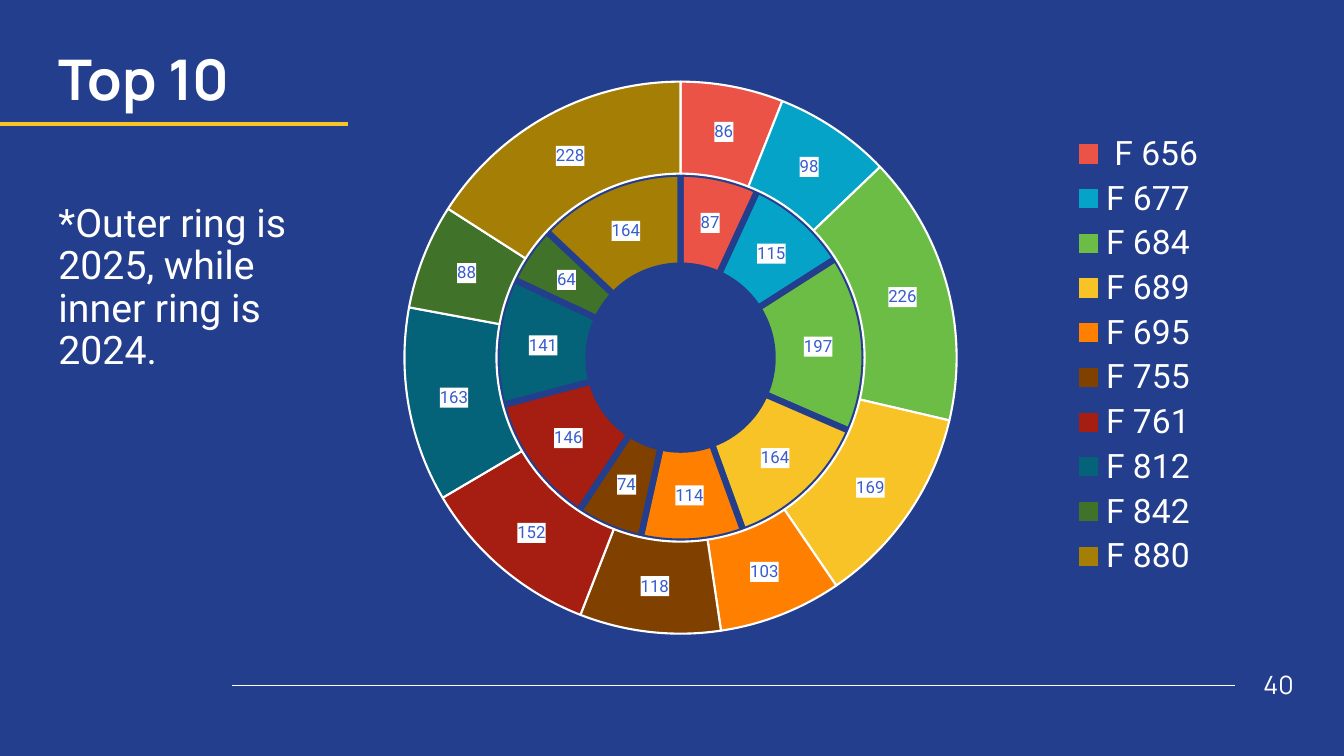
from lxml import etree
from pptx import Presentation
from pptx import util as u
from pptx.chart.data import CategoryChartData
from pptx.dml.color import RGBColor
from pptx.enum import chart as charts, shapes, text
from pptx.oxml import parse_xml
from pptx.oxml.ns import nsdecls, qn

WIDTH, HEIGHT = 13.33, 7.5
COLORS = {"navy": "243E8E", "white": "FFFFFF", "gold": "F7C327", "label": "385DCD"}
FLIGHTS = {  # name: (2024, 2025, colour)
    " F 656": (87, 86, "EB5347"),
    "F 677": (115, 98, "06A3C9"),
    "F 684": (197, 226, "6CBD45"),
    "F 689": (164, 169, "F7C327"),
    "F 695": (114, 103, "FF7F00"),
    "F 755": (74, 118, "804000"),
    "F 761": (146, 152, "A61D12"),
    "F 812": (141, 163, "046279"),
    "F 842": (64, 88, "417229"),
    "F 880": (164, 228, "A57E06"),
}
RINGS = [("Series 1", "navy", 4.5), ("Series 2", "white", 1.5)]
HOLE = 47


def rgb(name):
    return RGBColor.from_string(COLORS.get(name, name))


def inches(box):
    return [u.Inches(length) for length in box]


def set_font(font, color, **values):
    for key, value in values.items():
        setattr(font, key, value)
    font.color.rgb = rgb(color)


def add_rule(page, start, end, color, width):
    rule = page.shapes.add_connector(
        shapes.MSO_CONNECTOR.STRAIGHT, *inches(start + end))
    rule.line.color.rgb = rgb(color)
    rule.line.width = u.Pt(width)
    etree.SubElement(rule._element.spPr, qn("a:effectLst"))


def write(shape, box, words, anchor, color, para_format, **font):
    shape.left, shape.top, shape.width, shape.height = inches(box)
    frame = shape.text_frame
    frame.word_wrap = True
    frame.auto_size = text.MSO_AUTO_SIZE.NONE
    frame.vertical_anchor = anchor
    para = frame.paragraphs[0]
    properties = para._p.get_or_add_pPr()
    properties.set("marL", "0")
    properties.set("indent", "0")
    etree.SubElement(properties, qn("a:buNone"))
    for key, value in para_format.items():
        setattr(para, key, value)
    span = para.add_run()
    span.text = words
    set_font(span.font, color, **font)


def place(parent, position, box, inner=False):
    """Give a chart part a fixed layout in shares of the chart."""
    for old in parent.findall(qn("c:layout")):
        parent.remove(old)
    target = '<c:layoutTarget val="inner"/>' if inner else ""
    modes = "".join(f'<c:{axis}Mode val="edge"/>' for axis in "xy")
    sizes = "".join(f'<c:{key} val="{share}"/>' for key, share in zip("xywh", box))
    parent.insert(position, parse_xml(
        f'<c:layout {nsdecls("c")}><c:manualLayout>{target}{modes}{sizes}'
        '</c:manualLayout></c:layout>'))


def style_ring(ring, line_color, line_width):
    for index, (_, _, color) in enumerate(FLIGHTS.values()):
        part = ring.points[index].format
        part.fill.solid()
        part.fill.fore_color.rgb = rgb(color)
        part.line.color.rgb = rgb(line_color)
        part.line.width = u.Pt(line_width)
    labels = ring.data_labels
    labels.show_value = True
    labels.show_percentage = False
    set_font(labels.font, "label", size=u.Pt(12), name="Roboto")
    labels._element.find(qn("c:txPr")).addprevious(parse_xml(
        f'<c:spPr {nsdecls("c", "a")}><a:solidFill><a:srgbClr val="{COLORS["white"]}"/>'
        '</a:solidFill></c:spPr>'))


def add_rings(page, box):
    data = CategoryChartData()
    data.categories = list(FLIGHTS)
    for column, (name, _, _) in enumerate(RINGS):
        data.add_series(name, [row[column] for row in FLIGHTS.values()])
    chart = page.shapes.add_chart(
        charts.XL_CHART_TYPE.DOUGHNUT, *inches(box), data).chart
    chart.has_title = False
    set_font(chart.font, "navy", size=u.Pt(10), name="Roboto")
    plot = chart.plots[0]
    plot.vary_by_categories = True
    plot._element.find(qn("c:holeSize")).set("val", str(HOLE))
    for ring, (_, color, width) in zip(plot.series, RINGS):
        style_ring(ring, color, width)
    place(plot._element.getparent(), 0, (0.02, 0.065, 0.738, 0.868), inner=True)

    # Legend
    chart.has_legend = True
    legend = chart.legend
    legend.position = charts.XL_LEGEND_POSITION.RIGHT
    legend.include_in_layout = False
    set_font(legend.font, "white", size=u.Pt(24), name="Roboto")
    place(legend._element, 1, (0.76, 0.14, 0.15, 0.71))


def add_heading(page, box):
    left, top, width, height = box
    write(page.shapes.title, box, "Top 10", text.MSO_ANCHOR.MIDDLE, "white",
          {"alignment": text.PP_ALIGN.LEFT, "line_spacing": 0.9},
          size=u.Pt(40), name="Manrope", bold=True)
    base = top + height
    add_rule(page, (0, base), (3.45, base), "gold", 3)


def add_note(page, box):
    write(page.placeholders[1], box, "*Outer ring is 2025, while inner ring is 2024.",
          text.MSO_ANCHOR.TOP, "white",
          {"alignment": text.PP_ALIGN.LEFT, "line_spacing": 0.9, "space_before": u.Pt(0)},
          size=u.Pt(28), name="Roboto")


def add_footer(page, box):
    left, top, width, height = box
    middle = 6.8
    add_rule(page, (2.3, middle), (left, middle), "white", 1)
    write(page.shapes.add_textbox(*inches(box)), box, "40", text.MSO_ANCHOR.MIDDLE,
          "white", {"alignment": text.PP_ALIGN.RIGHT}, size=u.Pt(18), name="Manrope")


def main():
    deck = Presentation()
    deck.slide_width, deck.slide_height = inches((WIDTH, HEIGHT))
    page = deck.slides.add_slide(deck.slide_layouts[1])
    page.background.fill.solid()
    page.background.fill.fore_color.rgb = rgb("navy")
    add_rings(page, (2.79, 0.4, 10.18, 6.31))
    add_heading(page, (0.48, 0.4, 3.7, 0.83))
    add_note(page, (0.48, 1.97, 2.6, 3.99))
    add_footer(page, (12.25, 6.59, 0.68, 0.4))
    deck.save("out.pptx")


if __name__ == "__main__":
    main()
